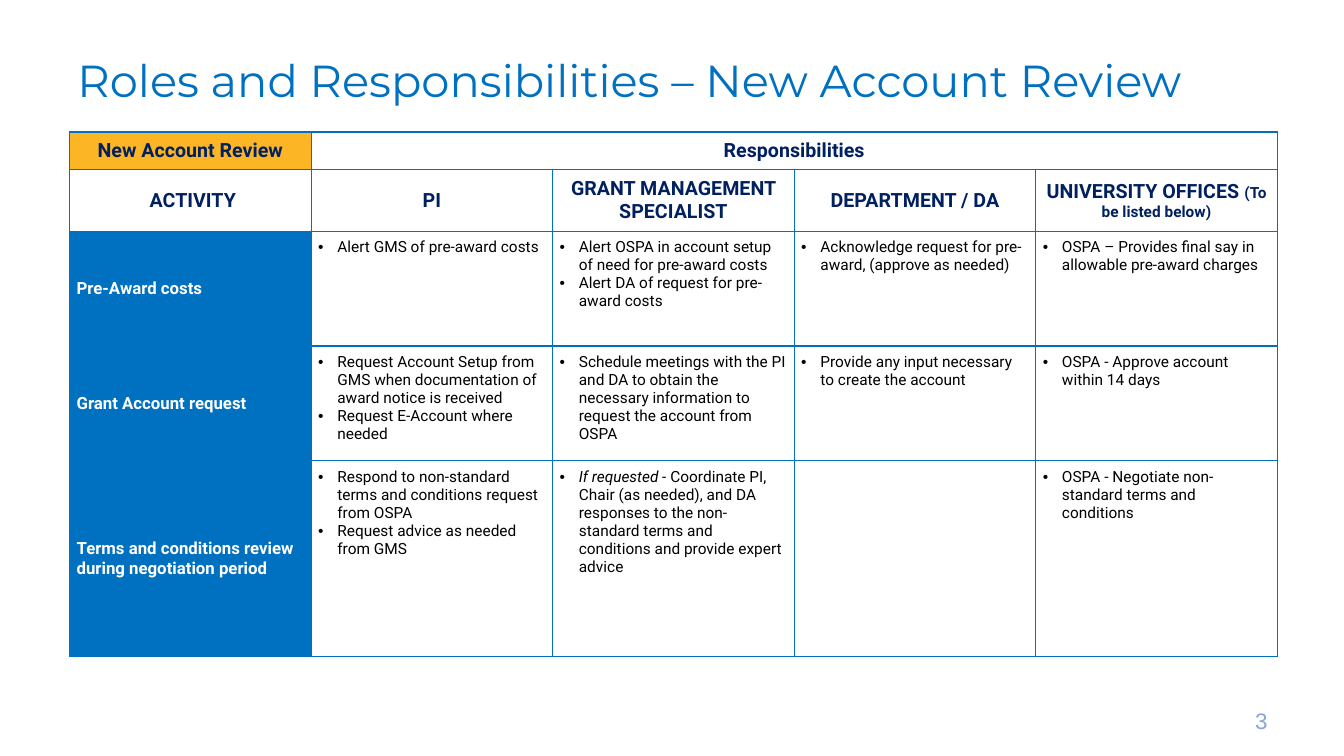
from dataclasses import dataclass

from lxml.etree import SubElement
from pptx import Presentation
from pptx.dml.color import RGBColor
from pptx.enum.text import MSO_ANCHOR as Anchor, PP_ALIGN as Align
from pptx.oxml.ns import qn
from pptx.util import Inches, Pt


@dataclass(frozen=True)
class Theme:
    blue: str = "0070C0"
    navy: str = "002060"
    gold: str = "FCB525"
    white: str = "FFFFFF"
    black: str = "000000"
    pale: str = "8CA4D2"
    title_font: str = "Montserrat"
    table_font: str = "Roboto"
    number_font: str = "Arial"
    title_size: int = 32
    number_size: int = 16
    header_size: int = 14
    activity_size: int = 12
    body_size: int = 11


THEME = Theme()
ROW_HEIGHTS = (0.37, 0.61, 1.14, 1.14, 1.94)
TABLE_WIDTH = 11.98

# Column headings: each is a list of (text, size) runs
HEADINGS = [
    [(" ACTIVITY", THEME.header_size)],
    [("PI", THEME.header_size)],
    [("GRANT MANAGEMENT SPECIALIST", THEME.header_size)],
    [("DEPARTMENT / DA", THEME.header_size)],
    [("UNIVERSITY OFFICES ", THEME.header_size),
     ("(To be listed below)", THEME.body_size)],
]

# Activity, then the bullets of each role; a bullet is (italic lead, text)
ACTIVITIES = [
    ("Pre-Award costs", [
        [("", "Alert GMS of pre-award costs")],
        [("", "Alert OSPA in account setup of need for pre-award costs"),
         ("", "Alert DA of request for pre-award costs")],
        [("", "Acknowledge request for pre-award, (approve as needed)")],
        [("", "OSPA – Provides final say in allowable pre-award charges")],
    ]),
    ("Grant Account request", [
        [("", "Request Account Setup from GMS when documentation of award notice is received"),
         ("", "Request E-Account where needed")],
        [("", "Schedule meetings with the PI and DA to obtain the necessary "
              "information to request the account from OSPA")],
        [("", "Provide any input necessary to create the account")],
        [("", "OSPA - Approve account within 14 days")],
    ]),
    ("Terms and conditions review during negotiation period", [
        [("", "Respond to non-standard terms and conditions request from OSPA"),
         ("", "Request advice as needed from GMS")],
        [("If requested - ", "Coordinate PI, Chair (as needed), and DA responses to the "
                             "non-standard terms and conditions and provide expert advice")],
        [],
        [("", "OSPA - Negotiate non-standard terms and conditions")],
    ]),
]


def add_run(paragraph, text, font, size, color, bold=False, italic=False):
    run = paragraph.add_run()
    run.text = text
    run.font.name = font
    run.font.size = Pt(size)
    run.font.bold = bold
    run.font.italic = italic
    run.font.color.rgb = RGBColor.from_string(color)


def add_text(slide, box, text, font, size, color, align=Align.LEFT,
             anchor=Anchor.TOP, line_spacing=None):
    frame = slide.shapes.add_textbox(*map(Inches, box)).text_frame
    frame.word_wrap = True
    frame.vertical_anchor = anchor
    paragraph = frame.paragraphs[0]
    paragraph.alignment = align
    paragraph.line_spacing = line_spacing
    add_run(paragraph, text, font, size, color)


def style_cell(cell, fill=None, anchor=Anchor.MIDDLE):
    cell.margin_left = cell.margin_right = Inches(0.07)
    cell.margin_top = cell.margin_bottom = Inches(0.07)
    cell.vertical_anchor = anchor
    properties = cell._tc.get_or_add_tcPr()
    for side in ("a:lnL", "a:lnR", "a:lnT", "a:lnB"):
        line = SubElement(properties, qn(side), w=str(Pt(1)))
        solid = SubElement(line, qn("a:solidFill"))
        SubElement(solid, qn("a:srgbClr"), val=THEME.blue)
    if fill:
        cell.fill.solid()
        cell.fill.fore_color.rgb = RGBColor.from_string(fill)
    else:
        cell.fill.background()


def fill_header(cell, runs, fill=None):
    style_cell(cell, fill)
    paragraph = cell.text_frame.paragraphs[0]
    paragraph.alignment = Align.CENTER
    for text, size in runs:
        add_run(paragraph, text, THEME.table_font, size, THEME.navy, bold=True)


def fill_activity(cell, name):
    style_cell(cell, THEME.blue)
    add_run(cell.text_frame.paragraphs[0], name, THEME.table_font,
            THEME.activity_size, THEME.white, bold=True)


def fill_bullets(cell, bullets):
    style_cell(cell, THEME.white, Anchor.TOP)
    frame = cell.text_frame
    for index, (lead, text) in enumerate(bullets):
        paragraph = frame.add_paragraph() if index else frame.paragraphs[0]
        properties = paragraph._p.get_or_add_pPr()
        properties.set("marL", str(Inches(0.19)))
        properties.set("indent", str(-Inches(0.19)))
        SubElement(properties, qn("a:buFont"), typeface="Arial")
        SubElement(properties, qn("a:buChar"), char="•")
        if lead:
            add_run(paragraph, lead, THEME.table_font, THEME.body_size,
                    THEME.black, italic=True)
        add_run(paragraph, text, THEME.table_font, THEME.body_size, THEME.black)


def add_roles_table(slide):
    columns = len(HEADINGS)
    table = slide.shapes.add_table(
        len(ROW_HEIGHTS), columns, Inches(0.69), Inches(1.31),
        Inches(TABLE_WIDTH), Inches(sum(ROW_HEIGHTS))).table
    table.first_row = table.horz_banding = False
    for row, height in zip(table.rows, ROW_HEIGHTS):
        row.height = Inches(height)
    for column in table.columns:
        column.width = Inches(TABLE_WIDTH / columns)

    # Header rows
    fill_header(table.cell(0, 0), [("New Account Review", THEME.header_size)], THEME.gold)
    fill_header(table.cell(0, 1), [("Responsibilities", THEME.header_size)])
    for column in range(2, columns):
        style_cell(table.cell(0, column))
    table.cell(0, 1).merge(table.cell(0, columns - 1))
    for column, runs in enumerate(HEADINGS):
        fill_header(table.cell(1, column), runs)

    # Activity rows
    for row, (activity, roles) in enumerate(ACTIVITIES, start=2):
        fill_activity(table.cell(row, 0), activity)
        for column, bullets in enumerate(roles, start=1):
            fill_bullets(table.cell(row, column), bullets)


def main():
    presentation = Presentation()
    presentation.slide_width = Inches(13.33)
    presentation.slide_height = Inches(7.5)
    slide = presentation.slides.add_slide(presentation.slide_layouts[6])

    # Title
    add_text(slide, (0.67, 0.35, 13.13, 0.73),
             "Roles and Responsibilities – New Account Review",
             THEME.title_font, THEME.title_size, THEME.blue, line_spacing=Pt(47.2))

    # Slide number
    add_text(slide, (9.56, 6.95, 3.11, 0.4), "3", THEME.number_font,
             THEME.number_size, THEME.pale, Align.RIGHT, Anchor.MIDDLE)

    # Table of roles
    add_roles_table(slide)
    presentation.save("out.pptx")


if __name__ == "__main__":
    main()
